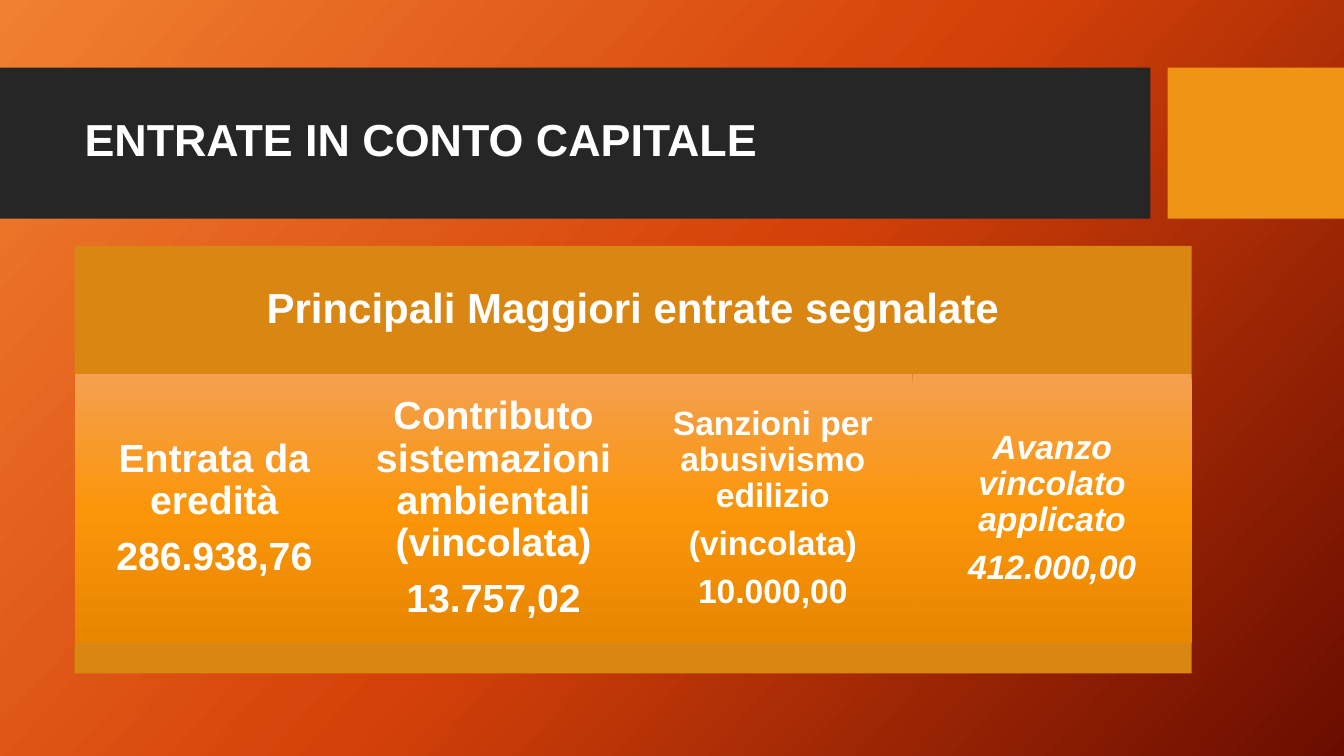
from copy import deepcopy

from pptx import Presentation
from pptx.dml.color import RGBColor
from pptx.enum.shapes import MSO_SHAPE
from pptx.enum.text import MSO_ANCHOR, PP_ALIGN
from pptx.util import Inches, Pt

FONT = "Arial"
WHITE, CHARCOAL, AMBER, OCHRE = "FFFFFF", "262626", "F09415", "DA8613"
BACKGROUND_COLORS = ["F18031", "D54209", "6A0D00"]
CARD_COLORS = ["F4A050", "FB960A", "E88600"]

PANEL_LEFT, PANEL_WIDTH = 0.74, 11.08
HEADER_TOP, HEADER_HEIGHT = 2.44, 1.27
CARD_TOP, CARD_HEIGHT = HEADER_TOP + HEADER_HEIGHT, 2.67

# Lines, text size, inset, italic
CARDS = [
    (["Entrata da eredità", "286.938,76"], 28, 0.12, False),
    (["Contributo sistemazioni ambientali (vincolata)", "13.757,02"], 28, 0.12, False),
    (["Sanzioni per abusivismo edilizio", "(vincolata)", "10.000,00"], 24, 0.1, False),
    (["Avanzo vincolato applicato", "412.000,00"], 24, 0.1, True),
]


def color(value):
    return RGBColor.from_string(value)


def set_gradient(fill, element, colors, angle):
    """Spread the colors evenly, at a clockwise angle in degrees."""
    fill.gradient()
    fill.gradient_angle = 360 - angle
    stop_list = element.xpath(".//a:gsLst")[0]
    while len(stop_list) < len(colors):
        stop_list.append(deepcopy(stop_list[0]))
    for index, (stop, value) in enumerate(zip(fill.gradient_stops, colors)):
        stop.color.rgb = color(value)
        stop.position = index / (len(colors) - 1)


def add_block(slide, left, top, width, height, fill):
    """Add a rectangle with one color or a list of gradient colors."""
    shape = slide.shapes.add_shape(
        MSO_SHAPE.RECTANGLE, Inches(left), Inches(top), Inches(width), Inches(height)
    )
    shape.shadow.inherit = False
    shape.line.fill.background()
    if isinstance(fill, list):
        set_gradient(shape.fill, shape.element, fill, 90)
    else:
        shape.fill.solid()
        shape.fill.fore_color.rgb = color(fill)
    return shape


def write_text(shape, lines, size, inset=0.12, italic=False, align=PP_ALIGN.CENTER):
    frame = shape.text_frame
    frame.word_wrap = True
    frame.vertical_anchor = MSO_ANCHOR.MIDDLE
    frame.margin_left = frame.margin_right = Inches(inset)
    frame.margin_top = frame.margin_bottom = Inches(inset)
    frame.text = "\n".join(lines)
    for paragraph in frame.paragraphs:
        paragraph.alignment = align
        paragraph.line_spacing = 0.9
        paragraph.space_after = Pt(0.35 * size)
        for run in paragraph.runs:
            run.font.name = FONT
            run.font.size = Pt(size)
            run.font.bold = True
            run.font.italic = italic
            run.font.color.rgb = color(WHITE)


def add_title(slide, text):
    add_block(slide, 0, 0.67, 11.41, 1.5, CHARCOAL)
    add_block(slide, 11.58, 0.67, 1.75, 1.5, AMBER)
    box = slide.shapes.add_textbox(
        Inches(0.74), Inches(0.82), Inches(10.51), Inches(1.18)
    )
    write_text(box, [text], 32, inset=0.1, align=PP_ALIGN.LEFT)


def add_panel(slide, heading):
    header = add_block(
        slide, PANEL_LEFT, HEADER_TOP, PANEL_WIDTH, HEADER_HEIGHT, OCHRE
    )
    write_text(header, [heading], 30)

    # Equal cards side by side
    card_width = PANEL_WIDTH / len(CARDS)
    for index, (lines, size, inset, italic) in enumerate(CARDS):
        left = PANEL_LEFT + index * card_width
        card = add_block(slide, left, CARD_TOP, card_width, CARD_HEIGHT, CARD_COLORS)
        write_text(card, lines, size, inset, italic)

    # Closing strip
    add_block(slide, PANEL_LEFT, CARD_TOP + CARD_HEIGHT, PANEL_WIDTH, 0.3, OCHRE)


def main():
    presentation = Presentation()
    presentation.slide_width = Inches(13.33)
    presentation.slide_height = Inches(7.5)
    slide = presentation.slides.add_slide(presentation.slide_layouts[6])
    set_gradient(slide.background.fill, slide.element, BACKGROUND_COLORS, 42)
    add_title(slide, "ENTRATE IN CONTO CAPITALE")
    add_panel(slide, "Principali Maggiori entrate segnalate")
    presentation.save("out.pptx")


if __name__ == "__main__":
    main()
